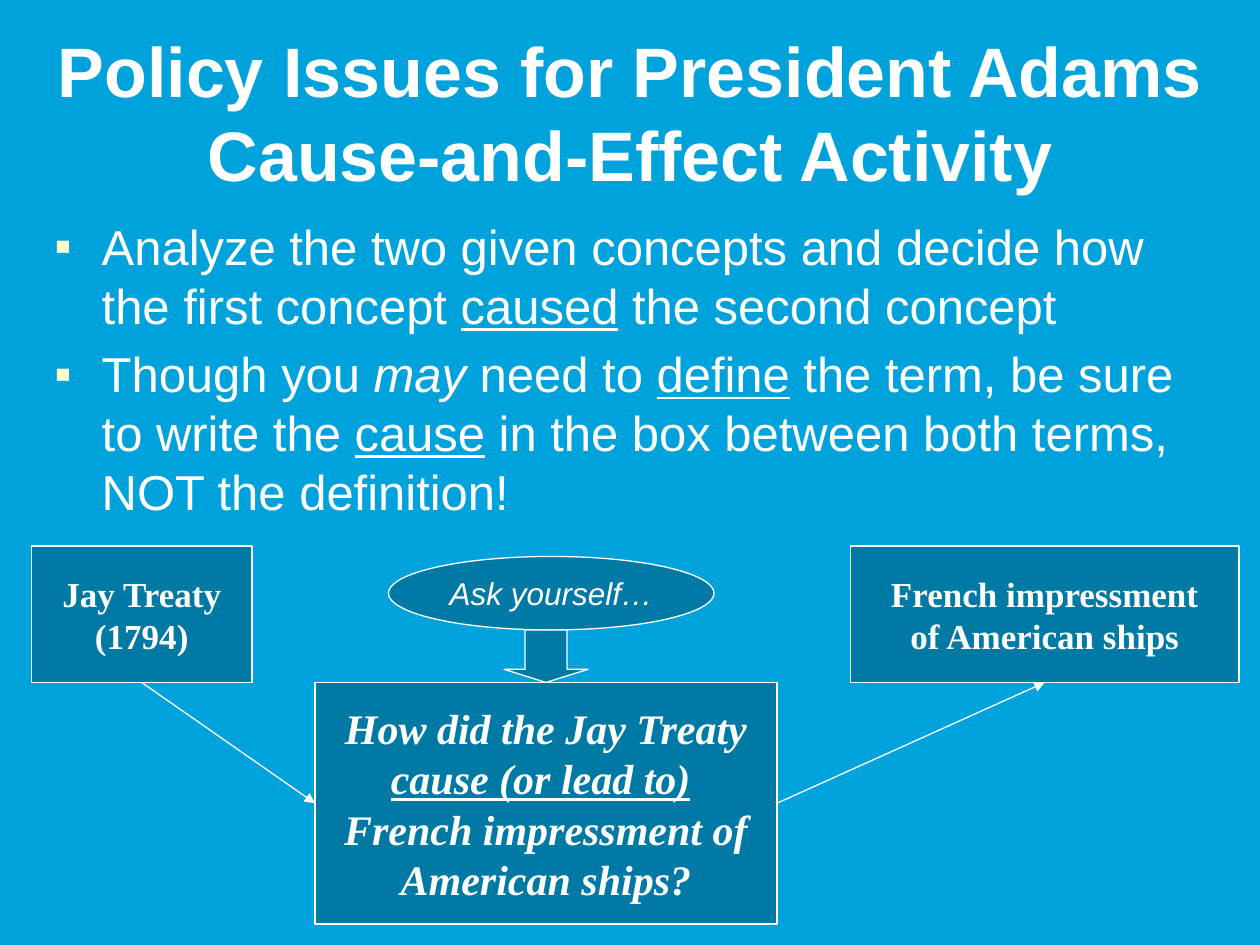
import pptx
import pptx.dml.color
import pptx.enum.shapes
import pptx.enum.text
import pptx.oxml
import pptx.oxml.ns
import pptx.util

Pt = pptx.util.Pt
RGBColor = pptx.dml.color.RGBColor
SHAPE = pptx.enum.shapes.MSO_SHAPE
ALIGN = pptx.enum.text.PP_ALIGN
ANCHOR = pptx.enum.text.MSO_ANCHOR

SKY = RGBColor(0x00, 0xA2, 0xDC)
TEAL = RGBColor(0x00, 0x79, 0xA4)
WHITE = RGBColor(0xFF, 0xFF, 0xFF)
BULLET = "FFFFCC"


def write(para, spans, font, size, align=ALIGN.CENTER, bold=False, italic=None):
    """Fill a paragraph with (text, style) spans; a newline is a line break."""
    para.alignment = align
    para.font.name, para.font.size = font, Pt(size)
    para.font.bold, para.font.italic = bold, italic
    para.font.color.rgb = WHITE
    for text, style in spans:
        for number, line in enumerate(text.split("\n")):
            if number:
                para.add_line_break()
            if line:
                span = para.add_run()
                span.text = line
                if style:
                    setattr(span.font, style, True)


def add_panel(kind, left, top, width, height):
    panel = page.shapes.add_shape(kind, Pt(left), Pt(top), Pt(width), Pt(height))
    panel.shadow.inherit = False
    panel.fill.solid()
    panel.fill.fore_color.rgb = TEAL
    panel.line.color.rgb = WHITE
    panel.line.width = Pt(0.75)
    panel.text_frame.word_wrap = False
    panel.text_frame.vertical_anchor = ANCHOR.MIDDLE
    return panel


deck = pptx.Presentation()
deck.slide_width, deck.slide_height = Pt(720), Pt(540)
page = deck.slides.add_slide(deck.slide_layouts[5])
page.background.fill.solid()
page.background.fill.fore_color.rgb = SKY

# Title
title = page.shapes.title
title.left, title.top, title.width, title.height = Pt(12), Pt(12), Pt(696), Pt(104)
title.text_frame.auto_size = pptx.enum.text.MSO_AUTO_SIZE.NONE
title.text_frame.vertical_anchor = ANCHOR.MIDDLE
write(title.text_frame.paragraphs[0],
      [("Policy Issues for President Adams\nCause-and-Effect Activity", None)],
      "Arial", 40, bold=True)

# Instructions
instructions = [
    [("Analyze the two given concepts and decide how the first concept ", None),
     ("caused", "underline"), (" the second concept", None)],
    [("Though you ", None), ("may", "italic"), (" need to ", None),
     ("define", "underline"), (" the term, be sure to write the ", None),
     ("cause", "underline"),
     (" in the box between both terms, NOT the definition!", None)],
]
box = page.shapes.add_textbox(Pt(24), Pt(120), Pt(672), Pt(192))
box.text_frame.word_wrap = True
for number, spans in enumerate(instructions):
    para = box.text_frame.add_paragraph() if number else box.text_frame.paragraphs[0]
    if number:
        para.space_before = Pt(5.6)
    properties = para._p.get_or_add_pPr()
    properties.set("marL", str(Pt(27)))
    properties.set("indent", str(-Pt(27)))
    namespace = pptx.oxml.ns.nsdecls("a")
    for element in (f'<a:buClr {namespace}><a:srgbClr val="{BULLET}"/></a:buClr>',
                    f'<a:buFont {namespace} typeface="Arial"/>',
                    f'<a:buChar {namespace} char="▪"/>'):
        properties.append(pptx.oxml.parse_xml(element))
    write(para, spans, "Arial", 28, ALIGN.LEFT)

# Cause, question and effect boxes
question = add_panel(SHAPE.RECTANGLE, 180, 390, 264, 138)
write(question.text_frame.paragraphs[0],
      [("How did the Jay Treaty\n", None), ("cause (or lead to)", "underline"),
       (" \nFrench impressment of\nAmerican ships?", None)],
      "Times New Roman", 24, bold=True, italic=True)

cause = add_panel(SHAPE.RECTANGLE, 18, 312, 126, 78)
effect = add_panel(SHAPE.RECTANGLE, 486, 312, 222, 78)
for panel, text in ((cause, "Jay Treaty\n(1794)"),
                    (effect, "French impressment\nof American ships")):
    write(panel.text_frame.paragraphs[0], [(text, None)],
          "Times New Roman", 20, bold=True)

# Arrows from cause to question to effect
for start, start_site, end, end_site in ((cause, 2, question, 1),
                                         (question, 3, effect, 2)):
    arrow = page.shapes.add_connector(
        pptx.enum.shapes.MSO_CONNECTOR.STRAIGHT, 0, 0, 0, 0)
    arrow.begin_connect(start, start_site)
    arrow.end_connect(end, end_site)
    arrow.line.color.rgb = WHITE
    arrow.line.width = Pt(0.75)
    line = arrow.line._get_or_add_ln()
    line.append(line.makeelement(pptx.oxml.ns.qn("a:tailEnd"), {"type": "triangle"}))
    outline = arrow._element.spPr
    outline.append(outline.makeelement(pptx.oxml.ns.qn("a:effectLst"), {}))

# Prompt above the question
prompt = add_panel(SHAPE.OVAL, 222, 318, 186, 42)
write(prompt.text_frame.paragraphs[0], [("Ask yourself…", None)],
      "Arial", 18, italic=True)
pointer = add_panel(SHAPE.DOWN_ARROW, 288, 360, 48, 30)
pointer.adjustments[0], pointer.adjustments[1] = 0.5, 0.25

deck.save("out.pptx")
